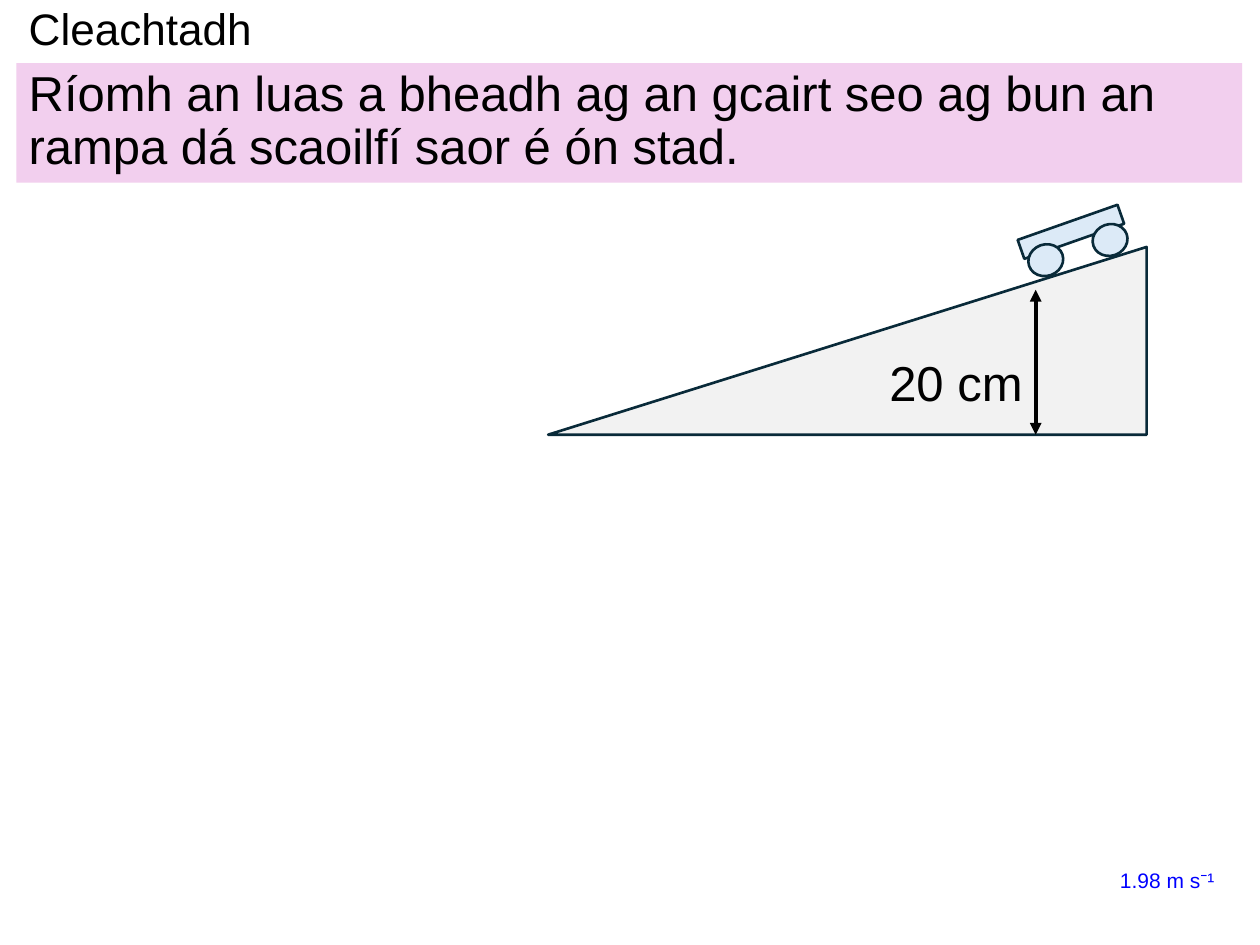
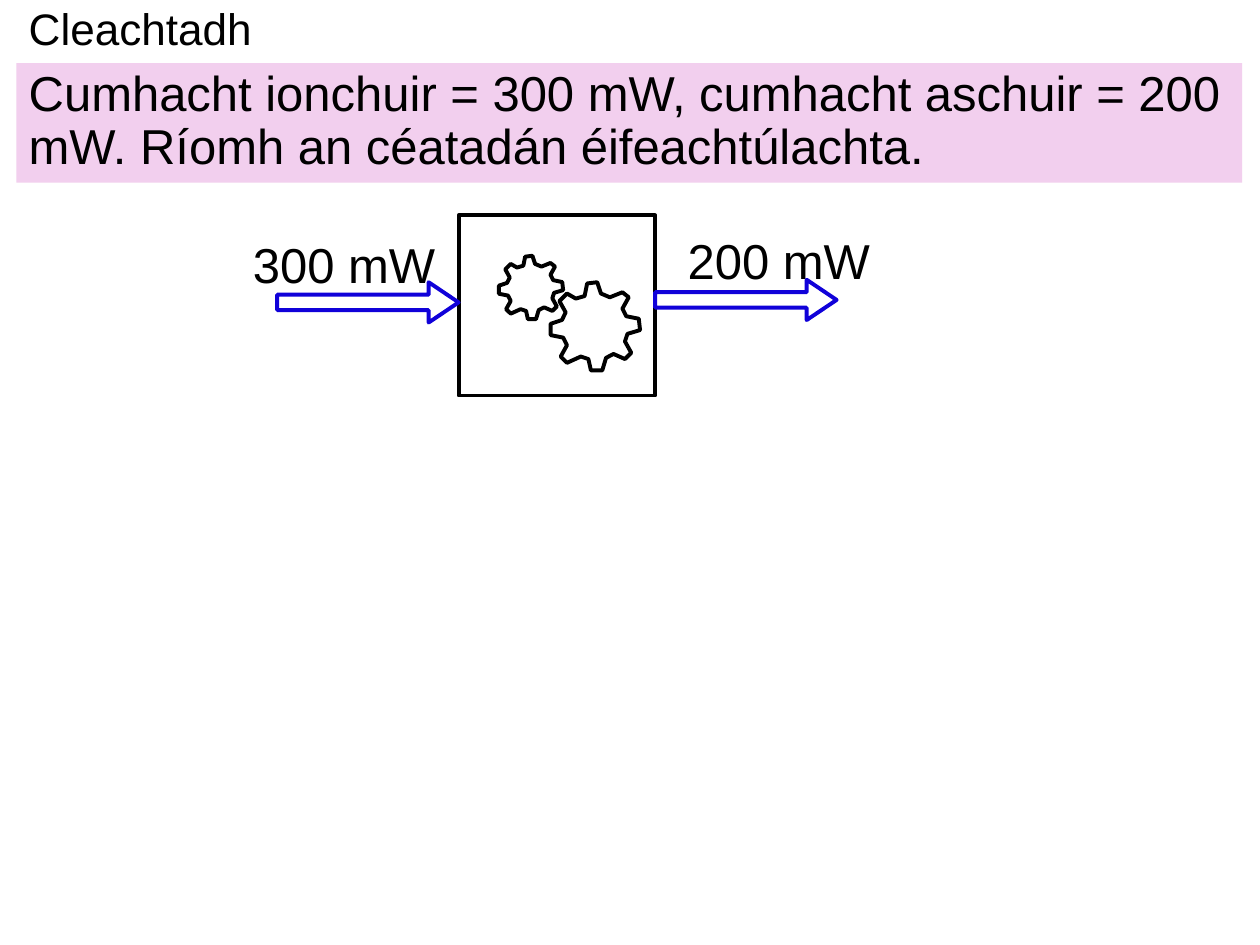
import pptx
import pptx.util
import pptx.dml.color
import pptx.enum.shapes
import pptx.enum.text
import pptx.oxml.ns
import lxml.etree

Inches = pptx.util.Inches
Pt = pptx.util.Pt
SHAPE = pptx.enum.shapes.MSO_SHAPE
ANCHOR = pptx.enum.text.MSO_ANCHOR

FONT = "Arial"
COLORS = {
    "text": "000000",
    "answer": "0000FF",
    "band": "F2CFEE",
    "ramp": "F2F2F2",
    "cart": "DCEAF7",
    "outline": "092A39",
    "arrow": "1001D9",
    "white": "FFFFFF",
}
TITLE = "Cleachtadh"
CART_TILT = 340.6
GEAR = [
    (0, 33), (9, 30), (12, 24), (7, 15), (13, 9), (20, 13), (27, 11), (29, 1),
    (37, 0), (40, 9), (47, 12), (57, 8), (62, 12), (57, 21), (60, 27), (70, 29),
    (71, 38), (61, 41), (59, 47), (64, 56), (59, 61), (50, 57), (44, 60), (41, 70),
    (32, 70), (30, 61), (24, 59), (13, 64), (8, 59), (13, 50), (10, 44), (0, 42),
]
GEAR_WIDTH = 71


def rgb(name):
    """Return the named colour."""
    return pptx.dml.color.RGBColor.from_string(COLORS[name])


def paint(sp, fill, line=None, width=2.25):
    """Give a shape its fill and outline, without a shadow."""
    sp.shadow.inherit = False
    sp.fill.solid()
    sp.fill.fore_color.rgb = rgb(fill)
    if line:
        sp.line.color.rgb = rgb(line)
        sp.line.width = Pt(width)
    else:
        sp.line.fill.background()
    return sp


def add_shape(shapes, kind, x, y, w, h, fill, line, width=2.25, rotation=0):
    """Add a painted preset shape."""
    sp = shapes.add_shape(kind, Inches(x), Inches(y), Inches(w), Inches(h))
    sp.rotation = rotation
    return paint(sp, fill, line, width)


def add_text(slide, text, x, y, w, h, size=28, color="text", wrap=True,
             anchor=ANCHOR.TOP, line_spacing=None, before=0, after=0):
    """Add a text box holding one styled paragraph."""
    sp = slide.shapes.add_textbox(Inches(x), Inches(y), Inches(w), Inches(h))
    tf = sp.text_frame
    tf.text = text
    tf.word_wrap = wrap
    tf.vertical_anchor = anchor
    p = tf.paragraphs[0]
    p.line_spacing = line_spacing
    p.space_before, p.space_after = Pt(before), Pt(after)
    font = p.runs[0].font
    font.name, font.size, font.color.rgb = FONT, Pt(size), rgb(color)
    return sp


def add_exercise(prs, question):
    """Add a slide with the shared title and a question band."""
    slide = prs.slides.add_slide(prs.slide_layouts[6])
    add_text(slide, TITLE, 0.13, 0, 7.23, 0.5, size=25.2,
             anchor=ANCHOR.MIDDLE, line_spacing=0.9)
    band = add_text(slide, question, 0.13, 0.5, 9.73, 0.95, line_spacing=0.9, before=10)
    band.fill.solid()
    band.fill.fore_color.rgb = rgb("band")
    return slide


def add_height_arrow(slide, x, top, bottom):
    """Add a vertical double-headed dimension arrow."""
    line = slide.shapes.add_connector(
        pptx.enum.shapes.MSO_CONNECTOR.STRAIGHT,
        Inches(x), Inches(top), Inches(x), Inches(bottom))
    line.line.color.rgb = rgb("text")
    line.line.width = Pt(2.25)
    ln = line.line._get_or_add_ln()
    for end in ("a:headEnd", "a:tailEnd"):
        lxml.etree.SubElement(ln, pptx.oxml.ns.qn(end), type="triangle")
    lxml.etree.SubElement(line._element.spPr, pptx.oxml.ns.qn("a:effectLst"))


def add_cart(slide, x, y):
    """Add the tilted cart, a body on two wheels."""
    group = slide.shapes.add_group_shape()
    parts = [
        (SHAPE.RECTANGLE, 0, 0, 0.84, 0.16),
        (SHAPE.OVAL, 0.08, 0.18, 0.28, 0.25),
        (SHAPE.OVAL, 0.59, 0.02, 0.28, 0.25),
    ]
    for kind, dx, dy, w, h in parts:
        add_shape(group.shapes, kind, x + dx, y + dy, w, h, "cart", "outline", 1.5, CART_TILT)


def add_ramp(slide, x, y, w, h):
    """Add the ramp with its height label, cart and dimension arrow."""
    ramp = add_shape(slide.shapes, SHAPE.ISOSCELES_TRIANGLE, x, y, w, h, "ramp", "outline", 1.5)
    ramp.adjustments[0] = 1
    add_text(slide, "20 cm", x + 2.61, y + 0.79, 1.54, 0.57)
    add_cart(slide, x + 3.73, y - 0.2)
    add_height_arrow(slide, x + 3.87, y + 0.34, y + h)


def add_power_arrow(slide, x, y):
    """Add a block arrow pointing right."""
    sp = add_shape(slide.shapes, SHAPE.DOWN_ARROW, x, y, 0.32, 1.44, "white", "arrow",
                   rotation=270)
    sp.adjustments[0], sp.adjustments[1] = 0.383, 0.742


def add_gear(slide, x, y, w):
    """Add a gear outline of the given width."""
    builder = slide.shapes.build_freeform(*GEAR[0], scale=Inches(w) / GEAR_WIDTH)
    builder.add_line_segments(GEAR[1:], close=True)
    paint(builder.convert_to_shape(Inches(x), Inches(y)), "white", "text")


def add_machine(slide, x, y, w, h):
    """Add the machine box with its gears and the power going in and out."""
    add_text(slide, "300 mW", x - 1.73, y + 0.1, 1.67, 0.57, wrap=False, after=12)
    add_shape(slide.shapes, SHAPE.RECTANGLE, x, y, w, h, "white", "text")
    add_text(slide, "200 mW", x + 1.72, y + 0.07, 1.67, 0.57, wrap=False, after=12)
    add_power_arrow(slide, x - 0.88, y - 0.03)
    add_power_arrow(slide, x + 2.12, y - 0.05)
    add_gear(slide, x + 0.73, y + 0.53, 0.71)
    add_gear(slide, x + 0.32, y + 0.32, 0.51)


def main():
    """Build and save the two exercises."""
    prs = pptx.Presentation()
    prs.slide_width, prs.slide_height = Inches(10), Inches(7.5)

    slide = add_exercise(
        prs, "Ríomh an luas a bheadh ag an gcairt seo ag bun an rampa dá scaoilfí saor é ón stad.")
    add_text(slide, "1.98 m s⁻¹", 8.79, 6.84, 0.97, 0.3, size=12, color="answer",
             wrap=False, after=12)
    add_ramp(slide, 4.35, 1.96, 4.75, 1.49)

    slide = add_exercise(
        prs, "Cumhacht ionchuir = 300 mW, cumhacht aschuir = 200 mW. "
             "Ríomh an céatadán éifeachtúlachta.")
    add_machine(slide, 3.64, 1.71, 1.56, 1.43)

    prs.save("out.pptx")


if __name__ == "__main__":
    main()
